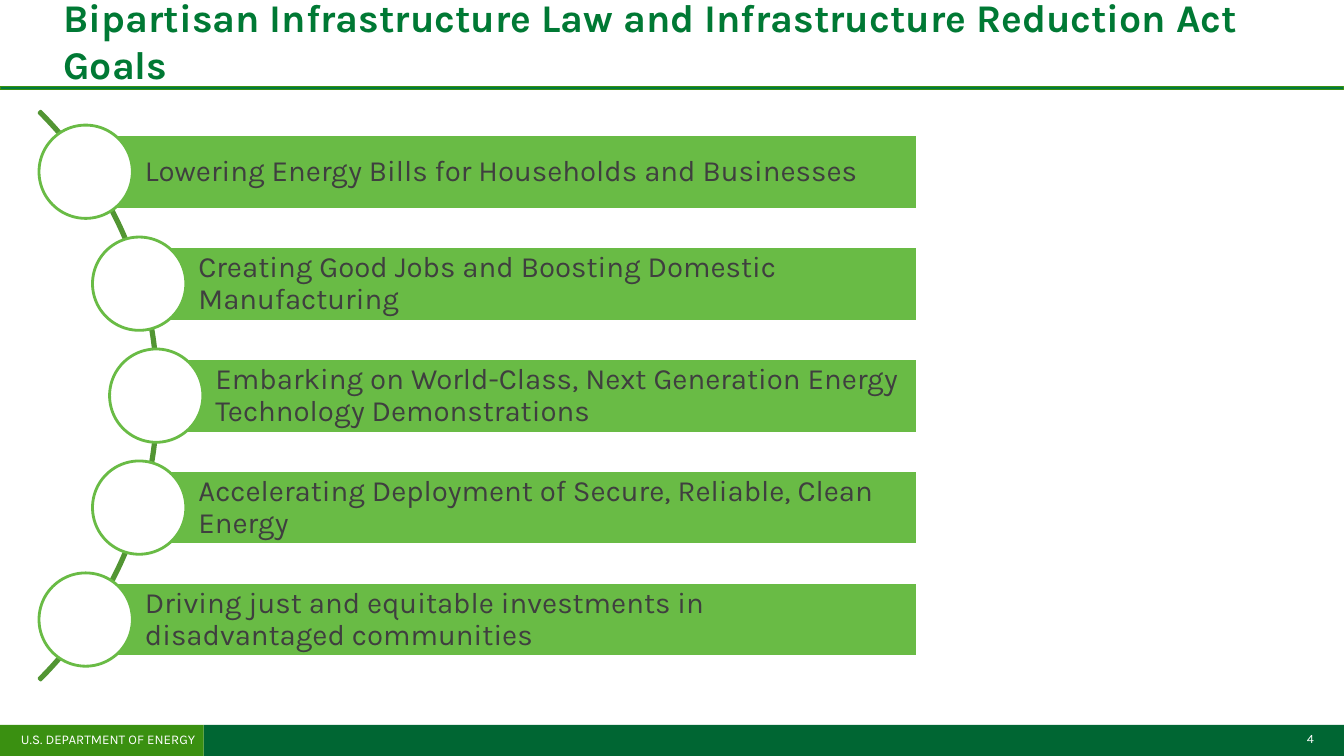
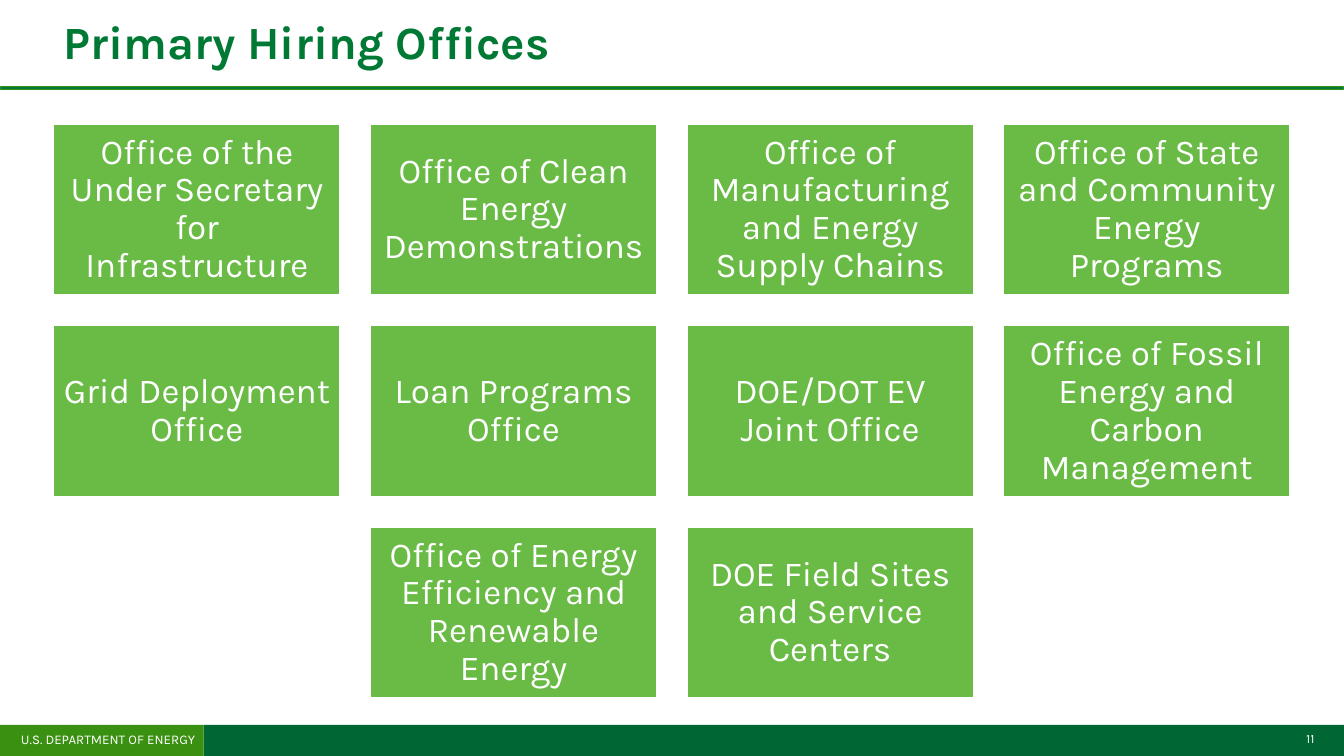
from pptx import Presentation
from pptx.dml.color import RGBColor
from pptx.enum.shapes import MSO_SHAPE
from pptx.enum.text import MSO_ANCHOR, PP_ALIGN
from pptx.util import Pt

WIDE, HIGH = 960, 540
FONT = "Karla"
HUES = {
    "white": "FFFFFF",
    "dark": "006633",
    "mid": "3A9011",
    "rule": "017A3E",
    "title": "007934",
    "arc": "529533",
    "lime": "69BB45",
    "text": "3F3F3F",
}
GOALS = [
    "Lowering Energy Bills for Households and Businesses",
    "Creating Good Jobs and Boosting Domestic Manufacturing",
    "Embarking on World-Class, Next Generation Energy Technology Demonstrations",
    "Accelerating Deployment of Secure, Reliable, Clean Energy",
    "Driving just and equitable investments in disadvantaged communities",
]
UNITS = [
    "Office of the Under Secretary for Infrastructure",
    "Office of Clean Energy Demonstrations",
    "Office of Manufacturing and Energy Supply Chains",
    "Office of State and Community Energy Programs",
    "Grid Deployment Office",
    "Loan Programs Office",
    "DOE/DOT EV Joint Office",
    "Office of Fossil Energy and Carbon Management",
    "Office of Energy Efficiency and Renewable Energy",
    "DOE Field Sites and Service Centers",
]


def hue(name):
    return RGBColor.from_string(HUES[name])


def draw(slide, kind, box, fill=None, line=None, thick=2):
    shape = slide.shapes.add_shape(kind, *map(Pt, box))
    shape.shadow.inherit = False
    if fill:
        shape.fill.solid()
        shape.fill.fore_color.rgb = hue(fill)
    else:
        shape.fill.background()
    if line:
        shape.line.color.rgb = hue(line)
        shape.line.width = Pt(thick)
    else:
        shape.line.fill.background()
    return shape


def write(shape, text, size, tint="white", bold=False, align=PP_ALIGN.LEFT,
          anchor=MSO_ANCHOR.MIDDLE, pads=(7.2, 3.6, 7.2, 3.6), lead=None):
    frame = shape.text_frame
    frame.word_wrap = True
    frame.vertical_anchor = anchor
    (frame.margin_left, frame.margin_top,
     frame.margin_right, frame.margin_bottom) = map(Pt, pads)
    para = frame.paragraphs[0]
    para.alignment = align
    if lead:
        para.line_spacing = lead
    run = para.add_run()
    run.text = text
    run.font.name = FONT
    run.font.size = Pt(size)
    run.font.bold = bold
    run.font.color.rgb = hue(tint)


def label(slide, box, text, size, **style):
    write(slide.shapes.add_textbox(*map(Pt, box)), text, size, **style)


def base(deck, title, size, page):
    slide = deck.slides.add_slide(deck.slide_layouts[6])
    top, split = 517.7, 145.5
    deep = HIGH - top
    rect = MSO_SHAPE.RECTANGLE
    draw(slide, rect, (split, top, WIDE - split, deep), "dark")
    draw(slide, rect, (0, top, split, deep), "mid")
    draw(slide, rect, (0, 61.9, WIDE, 2), "rule", "mid", 0.75)
    label(slide, (912, 520, 48, 18.7), str(page), 9,
          align=PP_ALIGN.CENTER, anchor=MSO_ANCHOR.TOP, lead=0.9)
    label(slide, (7.9, 519.1, 519, 18.7), "U.S. DEPARTMENT OF ENERGY", 9.5,
          anchor=MSO_ANCHOR.TOP)
    label(slide, (38.2, -3, 916, 64), title, size, tint="title", bold=True)
    return slide


def curve(slide, box, goals):
    x, y, w, h = box
    bar = h / (1.5 * len(goals) - 0.5)
    step, dot = 1.5 * bar, 1.25 * bar
    dents = (0, 38.2, 50.4, 38.2, 0)
    side = 574.6
    arc = draw(slide, MSO_SHAPE.BLOCK_ARC,
               (x + 52 - side, y + h / 2 - side / 2, side, side), None, "arc")
    for i, value in enumerate((189, 27, 0.003)):
        arc.adjustments[i] = value
    for i, (goal, dent) in enumerate(zip(goals, dents)):
        left, top = x + dent, y + i * step
        band = draw(slide, MSO_SHAPE.RECTANGLE,
                    (left, top, w - dent, bar), "lime", "white")
        write(band, goal, 21, "text", pads=(42.3, 4.2, 4.2, 4.2), lead=0.9)
        draw(slide, MSO_SHAPE.OVAL,
             (left - dot / 2, top + bar / 2 - dot / 2, dot, dot),
             "white", "lime")


def grid(slide, box, names, cols=4):
    x, y, w, h = box
    rows = -(-len(names) // cols)
    wide = w / (1.1 * cols - 0.1)
    gap = 0.1 * wide
    high = (h - gap * (rows - 1)) / rows
    for i, name in enumerate(names):
        row, col = divmod(i, cols)
        count = min(cols, len(names) - row * cols)
        left = x + (col + (cols - count) / 2) * (wide + gap)
        tile = draw(slide, MSO_SHAPE.RECTANGLE,
                    (left, y + row * (high + gap), wide, high),
                    "lime", "white")
        write(tile, name, 25, align=PP_ALIGN.CENTER, pads=(7.6,) * 4, lead=0.9)


def main():
    deck = Presentation()
    deck.slide_width, deck.slide_height = Pt(WIDE), Pt(HIGH)
    title = "Bipartisan Infrastructure Law and Infrastructure Reduction Act Goals"
    curve(base(deck, title, 28, 4), (61.2, 96, 594, 373.2), GOALS)
    grid(base(deck, "Primary Hiring Offices", 33, 11),
         (37.9, 88, 884, 411.2), UNITS)
    deck.save("out.pptx")


if __name__ == "__main__":
    main()
